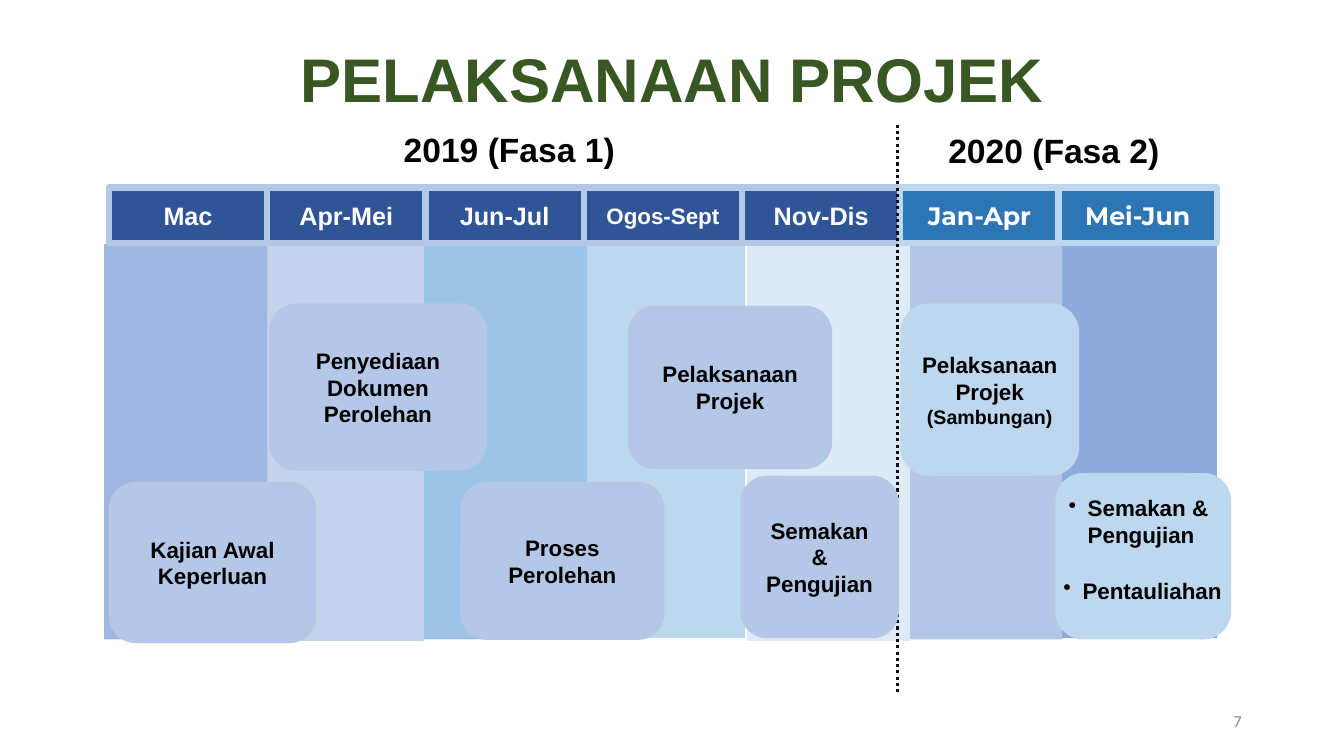
import pptx
import pptx.dml.color
import pptx.enum.dml
import pptx.enum.shapes
import pptx.enum.text
import pptx.oxml
import pptx.oxml.ns
import pptx.util

COLORS = {
    "title": "385723", "black": "000000", "white": "FFFFFF", "divider": "0D0D0D",
    "page": "8C8C8C", "navy": "2F5597", "blue": "2E75B6", "lavender": "B4C7E7",
    "sky": "BDD7EE", "periwinkle": "8FAADC", "azure": "9DC3E6", "pale": "DEEBF7",
}
GRID_LEFT, GRID_TOP = 1.08, 1.86
COLUMN, ROW = 1.57, 0.55
BAND_ROWS = 7.13

PHASE_1_MONTHS = ["Mac", "Apr-Mei", "Jun-Jul", "Ogos-Sept", "Nov-Dis"]
PHASE_2_MONTHS = ["Jan-Apr", "Mei-Jun"]

BANDS = [
    (5.97, 1, 1.03, "periwinkle", 100),
    (4.99, 1.02, 1.03, "lavender", 100),
    (4.03, 1.05, 1.03, "pale", 100),
    (2.99, 1, 1.03, "sky", 100),
    (1.99, 1.02, 1.03, "azure", 100),
    (1, 1.05, 0.99, "lavender", 78),
    (-0.03, 1.02, 1.03, "periwinkle", 86),
]

ACTIVITIES = [
    ("Kajian Awal Keperluan", (0, 5.31, 1.31, 2.91), "lavender", {}),
    ("Penyediaan Dokumen Perolehan", (1.01, 2.09, 1.38, 3.02), "lavender", {}),
    ("Proses\nPerolehan", (2.22, 5.31, 1.29, 2.85), "lavender", {}),
    ("Pelaksanaan\nProjek", (3.28, 2.13, 1.29, 2.95), "lavender", {}),
    ("Semakan\n&\nPengujian", (3.99, 5.2, 1, 2.93), "lavender", {}),
    ("Pelaksanaan\nProjek\n(Sambungan)", (5, 2.09, 1.13, 3.11), "sky", {"last_size": 14}),
    ("", (5.98, 5.15, 1.11, 3), "sky", {}),
]


def rgb(name):
    """Return the named colour."""
    return pptx.dml.color.RGBColor.from_string(COLORS[name])


def point(column, row):
    """Turn a grid position into slide coordinates."""
    return (pptx.util.Inches(GRID_LEFT + column * COLUMN),
            pptx.util.Inches(GRID_TOP + row * ROW))


def area(column, row, columns, rows):
    """Turn a grid area into left, top, width and height."""
    return (*point(column, row), pptx.util.Inches(columns * COLUMN),
            pptx.util.Inches(rows * ROW))


def write(frame, text, size=16, font="Arial", color="black", bold=True, align="CENTER",
          anchor="MIDDLE", wrap=True, bullet=False, last_size=None):
    """Fill a text frame, one paragraph per line of text."""
    frame.word_wrap = wrap
    frame.vertical_anchor = pptx.enum.text.MSO_ANCHOR[anchor]
    lines = text.split("\n")
    for number, line in enumerate(lines):
        paragraph = frame.paragraphs[0] if number == 0 else frame.add_paragraph()
        paragraph.alignment = pptx.enum.text.PP_ALIGN[align]
        if bullet:
            properties = paragraph._p.get_or_add_pPr()
            indent = pptx.util.Inches(0.19)
            properties.set("marL", str(indent))
            properties.set("indent", str(-indent))
            mark = pptx.oxml.parse_xml(
                f'<a:buChar {pptx.oxml.ns.nsdecls("a")} char="•"/>')
            properties.append(mark)
        run = paragraph.add_run()
        run.text = line
        is_last = number == len(lines) - 1
        run.font.size = pptx.util.Pt(last_size if last_size and is_last else size)
        run.font.name = font
        run.font.bold = bold
        run.font.color.rgb = rgb(color)


def add_label(slide, text, place, **text_format):
    """Add free-standing text on the grid."""
    label = slide.shapes.add_textbox(*area(*place))
    write(label.text_frame, text, **text_format)


def add_block(slide, place, fill, kind="RECTANGLE", border=None, opacity=100):
    """Add a filled shape on the grid and return it."""
    block = slide.shapes.add_shape(pptx.enum.shapes.MSO_SHAPE[kind], *area(*place))
    block.shadow.inherit = False
    block.fill.solid()
    block.fill.fore_color.rgb = rgb(fill)
    if opacity < 100:
        tint = block._element.spPr.find(".//" + pptx.oxml.ns.qn("a:srgbClr"))
        tint.append(pptx.oxml.parse_xml(
            f'<a:alpha {pptx.oxml.ns.nsdecls("a")} val="{opacity * 1000}"/>'))
    if border:
        block.line.color.rgb = rgb(border)
        block.line.width = pptx.util.Pt(4.5)
    else:
        block.line.fill.background()
    return block


def add_months(slide, months, first_column, fill, border, font):
    """Add the header cells of one phase."""
    for column, month in enumerate(months, first_column):
        header = add_block(slide, (column, 0, 1, 1), fill, border=border)
        size = 16 if month == "Ogos-Sept" else 18
        write(header.text_frame, month, size=size, font=font, color="white")


def add_divider(slide, column, top_row, bottom_row):
    """Add the dotted line between the two phases."""
    divider = slide.shapes.add_connector(
        pptx.enum.shapes.MSO_CONNECTOR.STRAIGHT,
        *point(column, top_row), *point(column, bottom_row))
    divider.line.color.rgb = rgb("divider")
    divider.line.width = pptx.util.Pt(2.25)
    divider.line.dash_style = pptx.enum.dml.MSO_LINE.ROUND_DOT
    divider._element.spPr.append(
        pptx.oxml.parse_xml(f'<a:effectLst {pptx.oxml.ns.nsdecls("a")}/>'))


def main():
    """Build the project timeline slide."""
    deck = pptx.Presentation()
    deck.slide_width = pptx.util.Inches(13.33)
    deck.slide_height = pptx.util.Inches(7.5)
    slide = deck.slides.add_slide(deck.slide_layouts[6])

    for column, row, columns, fill, opacity in BANDS:
        add_block(slide, (column, row, columns, BAND_ROWS), fill, opacity=opacity)

    add_label(slide, "PELAKSANAAN PROJEK", (1.15, -2.73, 4.87, 1.53), size=44,
              color="title", align="LEFT", anchor="TOP", wrap=False)
    add_months(slide, PHASE_1_MONTHS, 0, "navy", "lavender", "Arial")
    add_months(slide, PHASE_2_MONTHS, len(PHASE_1_MONTHS), "blue", "sky", "Montserrat")
    add_divider(slide, 4.98, -1.13, 9.15)

    phase_format = {"size": 24, "align": "LEFT", "anchor": "TOP"}
    add_label(slide, "2019 (Fasa 1)", (1.8, -1.15, 1.51, 0.91), **phase_format)
    add_label(slide, "2020 (Fasa 2)", (5.24, -1.13, 2.52, 0.91), **phase_format)

    for text, place, fill, text_format in ACTIVITIES:
        card = add_block(slide, place, fill, kind="ROUNDED_RECTANGLE")
        if text:
            write(card.text_frame, text, **text_format)

    add_label(slide, "Semakan & Pengujian", (6, 5.45, 1.12, 1.65),
              align="LEFT", anchor="TOP", bullet=True)
    add_label(slide, "Pentauliahan", (5.96, 6.93, 1.14, 0.67),
              anchor="TOP", wrap=False, bullet=True)
    add_label(slide, "7", (5.31, 9.25, 1.91, 0.73), size=12, font="Calibri",
              color="page", bold=False, align="RIGHT")
    deck.save("out.pptx")


if __name__ == "__main__":
    main()
